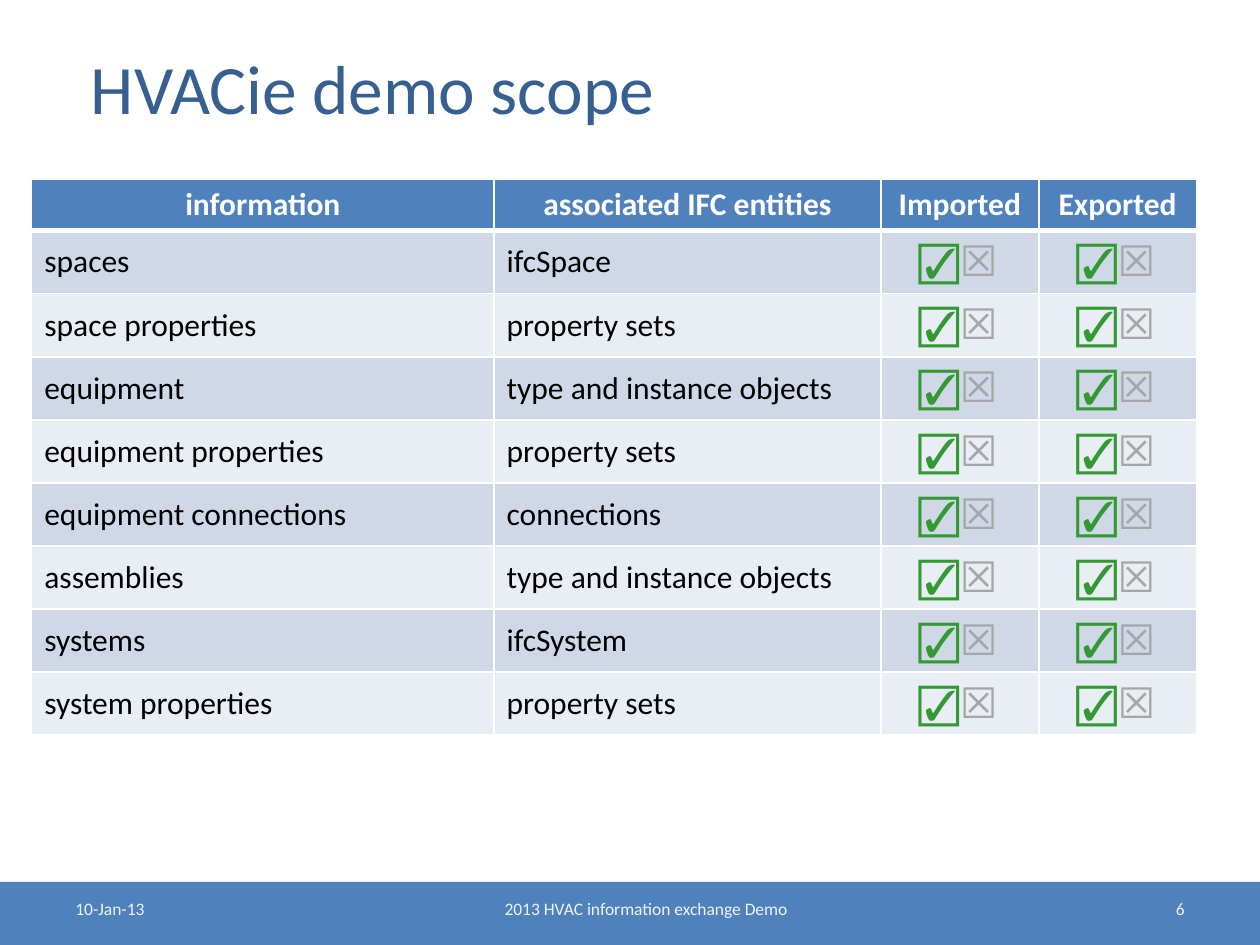
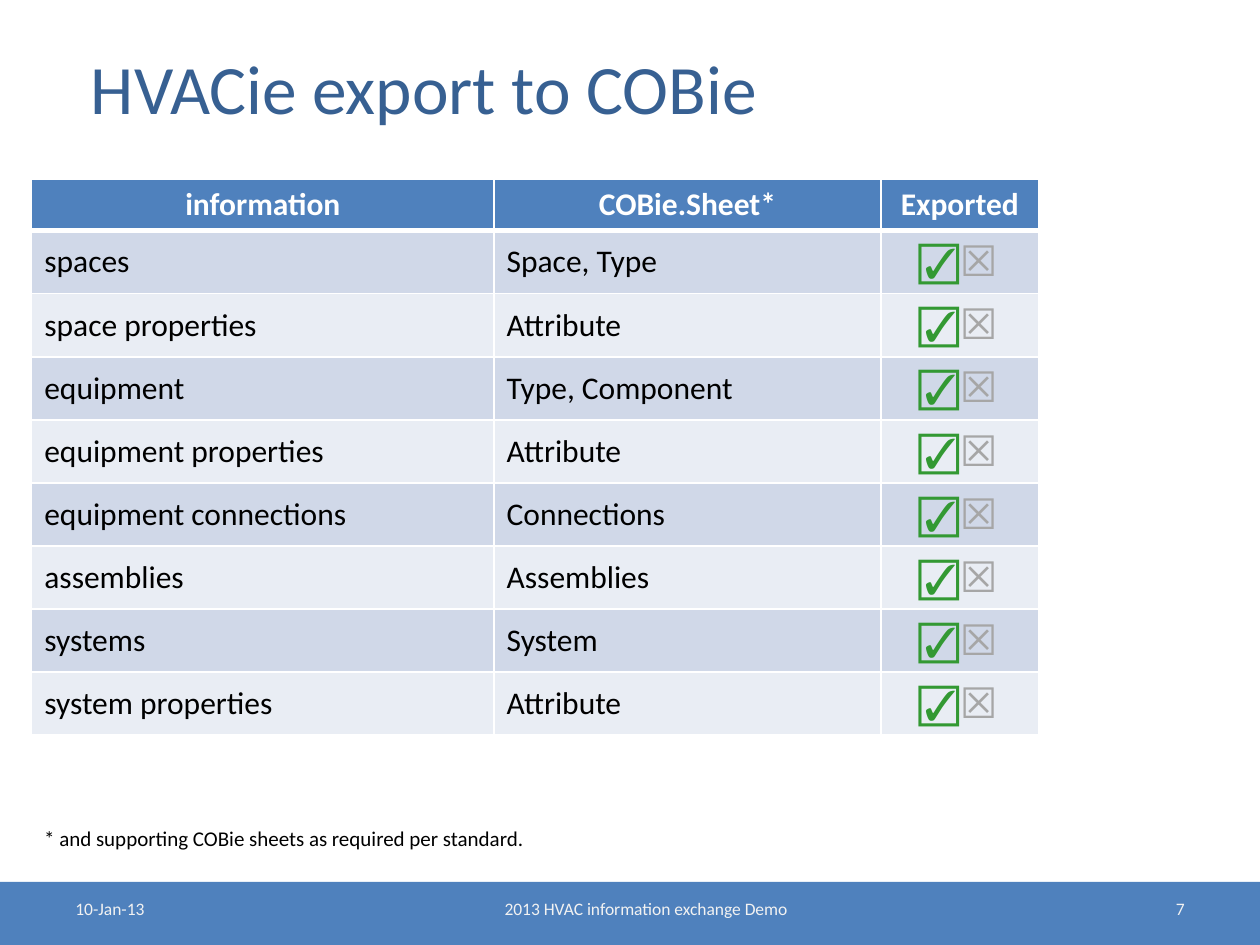
from lxml import etree
from pptx import Presentation
from pptx.dml.color import RGBColor
from pptx.enum.shapes import MSO_SHAPE
from pptx.enum.text import MSO_ANCHOR, PP_ALIGN
from pptx.oxml.ns import qn
from pptx.util import Cm, Pt

RECT = MSO_SHAPE.RECTANGLE
LEFT, CENTER, RIGHT = PP_ALIGN.LEFT, PP_ALIGN.CENTER, PP_ALIGN.RIGHT
TOP, MIDDLE = MSO_ANCHOR.TOP, MSO_ANCHOR.MIDDLE

WHITE = RGBColor(0xFF, 0xFF, 0xFF)
BLACK = RGBColor(0x00, 0x00, 0x00)
BLUE = RGBColor(0x4F, 0x81, 0xBD)
TITLE_BLUE = RGBColor(0x37, 0x60, 0x92)
FOOTER_TEXT = RGBColor(0xF2, 0xF2, 0xF2)
BANDS = RGBColor(0xD0, 0xD8, 0xE8), RGBColor(0xE9, 0xED, 0xF4)
CHECK_GREEN = RGBColor(0x33, 0x99, 0x33)
CROSS_GREY = RGBColor(0xA6, 0xA6, 0xA6)

FONT = "Calibri"
SLIDE_W, SLIDE_H = Cm(25.4), Cm(19.05)
MARGIN = Cm(1.27)
TABLE_LEFT = Cm(0.64)
TEXT_COLS = [Cm(9.32), Cm(7.8)]
MARK_COL = Cm(3.18)
HEADER_H, ROW_H = Cm(1.04), Cm(1.27)
THIN, THICK = Pt(1), Pt(3)

INFORMATION = ["spaces", "space properties", "equipment", "equipment properties",
               "equipment connections", "assemblies", "systems", "system properties"]
IFC_ENTITIES = ["ifcSpace", "property sets", "type and instance objects", "property sets",
                "connections", "type and instance objects", "ifcSystem", "property sets"]
COBIE_SHEETS = ["Space, Type", "Attribute", "Type, Component", "Attribute",
                "Connections", "Assemblies", "System", "Attribute"]


def style(p, size, color, align=LEFT, bold=False):
    p.alignment = align
    p.font.name = FONT
    p.font.size = Pt(size)
    p.font.bold = bold
    p.font.color.rgb = color


def add_text(slide, text, left, top, width, height, size, color,
             align=LEFT, anchor=TOP, wrap=True):
    tf = slide.shapes.add_textbox(left, top, width, height).text_frame
    tf.word_wrap = wrap
    tf.vertical_anchor = anchor
    p = tf.paragraphs[0]
    p.text = text
    style(p, size, color, align)


def add_title(slide, text):
    add_text(slide, text, MARGIN, Cm(0.76), SLIDE_W - 2 * MARGIN, Cm(1.98),
             39.6, TITLE_BLUE, anchor=MIDDLE)


def add_footer(slide, number):
    sp = slide.shapes.add_shape(RECT, 0, SLIDE_H - Cm(1.27), SLIDE_W, Cm(1.27))
    sp.shadow.inherit = False
    sp.fill.solid()
    sp.fill.fore_color.rgb = BLUE
    sp.line.fill.background()
    side_w = Cm(5.93)
    for text, left, width, align in (
            ("10-Jan-13", MARGIN, side_w, LEFT),
            ("2013 HVAC information exchange Demo", Cm(7.41), Cm(11.22), CENTER),
            (str(number), SLIDE_W - MARGIN - side_w, side_w, RIGHT)):
        add_text(slide, text, left, Cm(17.98), width, Cm(0.69), 10, FOOTER_TEXT, align)


def set_borders(cell, top=THIN, bottom=THIN):
    tc_pr = cell._tc.get_or_add_tcPr()
    for side, width in (("L", THIN), ("R", THIN), ("T", top), ("B", bottom)):
        ln = etree.SubElement(tc_pr, qn(f"a:ln{side}"), w=str(width))
        fill = etree.SubElement(ln, qn("a:solidFill"))
        etree.SubElement(fill, qn("a:srgbClr"), val=str(WHITE))


def fill_cell(cell, color):
    cell.fill.solid()
    cell.fill.fore_color.rgb = color


def write_marks(p):
    """Put a green check and a greyed-out cross side by side."""
    style(p, 24, BLACK, CENTER, bold=True)
    for mark, color in (("☑", CHECK_GREEN), ("☒", CROSS_GREY)):
        r = p.add_run()
        r.text = mark
        r.font.color.rgb = color


def add_scope_table(slide, headers, entries):
    """Pair each kind of information with its entry; further columns hold marks."""
    widths = TEXT_COLS + [MARK_COL] * (len(headers) - len(TEXT_COLS))
    table = slide.shapes.add_table(
        len(entries) + 1, len(headers), TABLE_LEFT, Cm(3.61),
        sum(widths), HEADER_H + ROW_H * len(entries)).table
    for column, width in zip(table.columns, widths):
        column.width = width

    table.rows[0].height = HEADER_H
    for cell, header in zip(table.rows[0].cells, headers):
        set_borders(cell, bottom=THICK)
        fill_cell(cell, BLUE)
        p = cell.text_frame.paragraphs[0]
        p.text = header
        style(p, 18, WHITE, CENTER, bold=True)

    for i, texts in enumerate(zip(INFORMATION, entries)):
        row = table.rows[i + 1]
        row.height = ROW_H
        for j, cell in enumerate(row.cells):
            set_borders(cell, top=THIN if i else THICK)
            fill_cell(cell, BANDS[i % 2])
            cell.vertical_anchor = MIDDLE
            p = cell.text_frame.paragraphs[0]
            if j < len(texts):
                p.text = texts[j]
                style(p, 18, BLACK)
            else:
                write_marks(p)


def add_scope_slide(prs, number, title, headers, entries):
    slide = prs.slides.add_slide(prs.slide_layouts[6])
    add_title(slide, title)
    add_scope_table(slide, headers, entries)
    add_footer(slide, number)
    return slide


def main():
    prs = Presentation()
    prs.slide_width, prs.slide_height = SLIDE_W, SLIDE_H
    add_scope_slide(prs, 6, " HVACie demo scope",
                    ["information", "associated IFC entities", "Imported", "Exported"],
                    IFC_ENTITIES)
    slide = add_scope_slide(prs, 7, " HVACie export to COBie",
                            ["information", "COBie.Sheet*", "Exported"], COBIE_SHEETS)
    add_text(slide, "* and supporting COBie sheets as required per standard.",
             TABLE_LEFT, Cm(16.51), Cm(10.29), Cm(0.76), 12, BLACK, wrap=False)
    prs.save("out.pptx")


if __name__ == "__main__":
    main()
